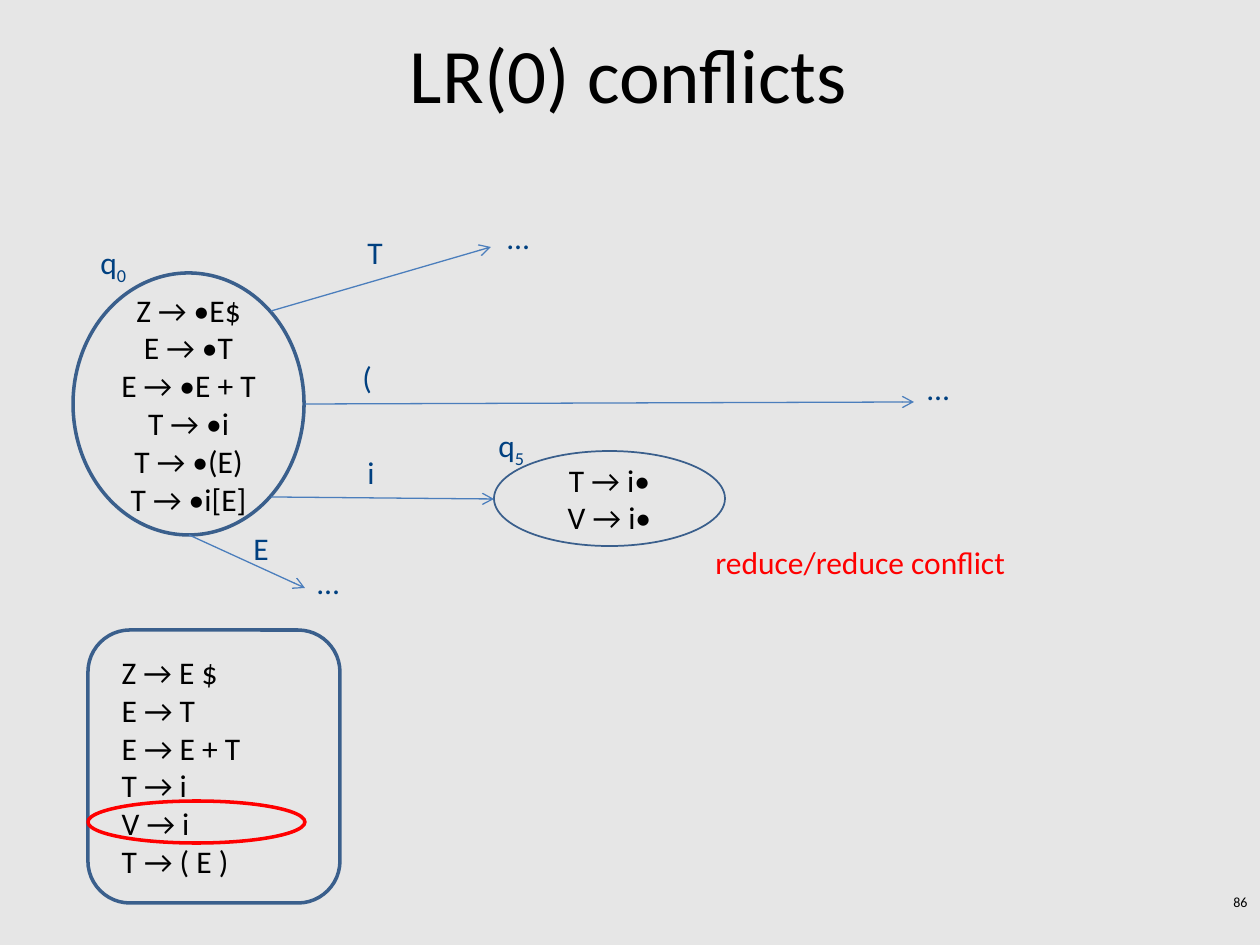
from dataclasses import dataclass

from pptx import Presentation
from pptx import util as u
from pptx.dml.color import RGBColor
from pptx.enum import shapes, text
from pptx.oxml.ns import qn
from lxml import etree

PX = 914400 / 126
SHAPE = shapes.MSO_SHAPE
ALIGN = text.PP_ALIGN


@dataclass(frozen=True)
class Theme:
    font: str = "Calibri"
    background: str = "E6E6E6"
    ink: str = "000000"
    label: str = "004080"
    alert: str = "FF0000"
    outline: str = "3A5F8C"
    arrow: str = "4B7EBC"
    title_size: int = 44
    body_size: int = 18
    number_size: int = 8


def px(*lengths):
    return [u.Emu(round(n * PX)) for n in lengths]


def rgb(value):
    return RGBColor.from_string(value)


class Diagram:
    def __init__(self, prs, theme):
        self.theme = theme
        self.s = prs.slides.add_slide(prs.slide_layouts[5])
        fill = self.s.background.fill
        fill.solid()
        fill.fore_color.rgb = rgb(theme.background)

    def run(self, p, words, size, color, baseline=0):
        r = p.add_run()
        r.text = words
        r.font.name = self.theme.font
        r.font.size = u.Pt(size)
        r.font.color.rgb = rgb(color)
        if baseline:
            r.font._element.set("baseline", str(baseline * 1000))

    def title(self, words, *box):
        sp = self.s.shapes.title
        sp.left, sp.top, sp.width, sp.height = px(*box)
        tf = sp.text_frame
        tf.vertical_anchor = text.MSO_ANCHOR.MIDDLE
        p = tf.paragraphs[0]
        p.alignment = ALIGN.CENTER
        self.run(p, words, self.theme.title_size, self.theme.ink)

    def shape(self, kind, box, color, width, lines=(), align=ALIGN.CENTER, indent=0):
        sp = self.s.shapes.add_shape(kind, *px(*box))
        sp.shadow.inherit = False
        sp.fill.background()
        sp.line.color.rgb = rgb(color)
        sp.line.width = u.Pt(width)
        tf = sp.text_frame
        tf.word_wrap = True
        tf.vertical_anchor = text.MSO_ANCHOR.MIDDLE
        for i, words in enumerate(lines):
            p = tf.add_paragraph() if i else tf.paragraphs[0]
            p.alignment = align
            if indent:
                p._p.get_or_add_pPr().set("marL", str(px(indent)[0]))
            self.run(p, words, self.theme.body_size, self.theme.ink)

    def label(self, words, left, top, width, color=None, subscript=""):
        sp = self.s.shapes.add_textbox(*px(left, top, width, 50))
        tf = sp.text_frame
        tf.word_wrap = False
        tf.auto_size = text.MSO_AUTO_SIZE.SHAPE_TO_FIT_TEXT
        p = tf.paragraphs[0]
        color = color or self.theme.label
        self.run(p, words, self.theme.body_size, color)
        if subscript:
            self.run(p, subscript, self.theme.body_size, color, -25)

    def page_number(self, words, *box):
        sp = self.s.shapes.add_textbox(*px(*box))
        tf = sp.text_frame
        tf.word_wrap = True
        p = tf.paragraphs[0]
        p.alignment = ALIGN.RIGHT
        self.run(p, words, self.theme.number_size, self.theme.ink)

    def arrow(self, *ends):
        c = self.s.shapes.add_connector(shapes.MSO_CONNECTOR.STRAIGHT, *px(*ends))
        c.line.color.rgb = rgb(self.theme.arrow)
        c.line.width = u.Pt(0.75)
        etree.SubElement(c.line._get_or_add_ln(), qn("a:tailEnd"), type="arrow")
        etree.SubElement(c._element.spPr, qn("a:effectLst"))


def main():
    prs = Presentation()
    prs.slide_width, prs.slide_height = px(1260, 945)
    t = Theme()
    d = Diagram(prs, t)

    d.title("LR(0) conflicts", 93, -6, 1071, 157)
    d.page_number("86", 998, 887, 262, 38)

    grammar = ["Z → E $", "E → T", "E → E + T", "T → i", "V → i", "T → ( E )"]
    d.shape(SHAPE.ROUNDED_RECTANGLE, (88, 630, 252, 273), t.outline, 2,
            grammar, ALIGN.LEFT, 9)
    start_items = ["Z → •E$", "E → •T", "E → •E + T", "T → •i", "T → •(E)", "T → •i[E]"]
    d.shape(SHAPE.OVAL, (73, 273, 231, 262), t.outline, 2, start_items)
    d.shape(SHAPE.OVAL, (494, 451, 231, 95), t.outline, 1, ["T → i•", "V → i•"])

    for ends in [(189, 535, 305, 588), (271, 497, 494, 499),
                 (271, 311, 491, 247), (305, 404, 914, 402)]:
        d.arrow(*ends)

    for number, left, top in [("0", 88, 237), ("5", 486, 420)]:
        d.label("q", left, top, 53, subscript=number)
    for symbol, left, top, width in [("T", 355, 227, 42), ("(", 350, 352, 35),
                                     ("i", 355, 447, 33), ("E", 241, 523, 42)]:
        d.label(symbol, left, top, width)
    d.label("reduce/reduce conflict", 703, 537, 319, t.alert)
    for left, top in [(495, 212), (915, 363), (305, 557)]:
        d.label("…", left, top, 48)

    d.shape(SHAPE.OVAL, (88, 801, 217, 42), t.alert, 2)
    prs.save("out.pptx")


if __name__ == "__main__":
    main()
